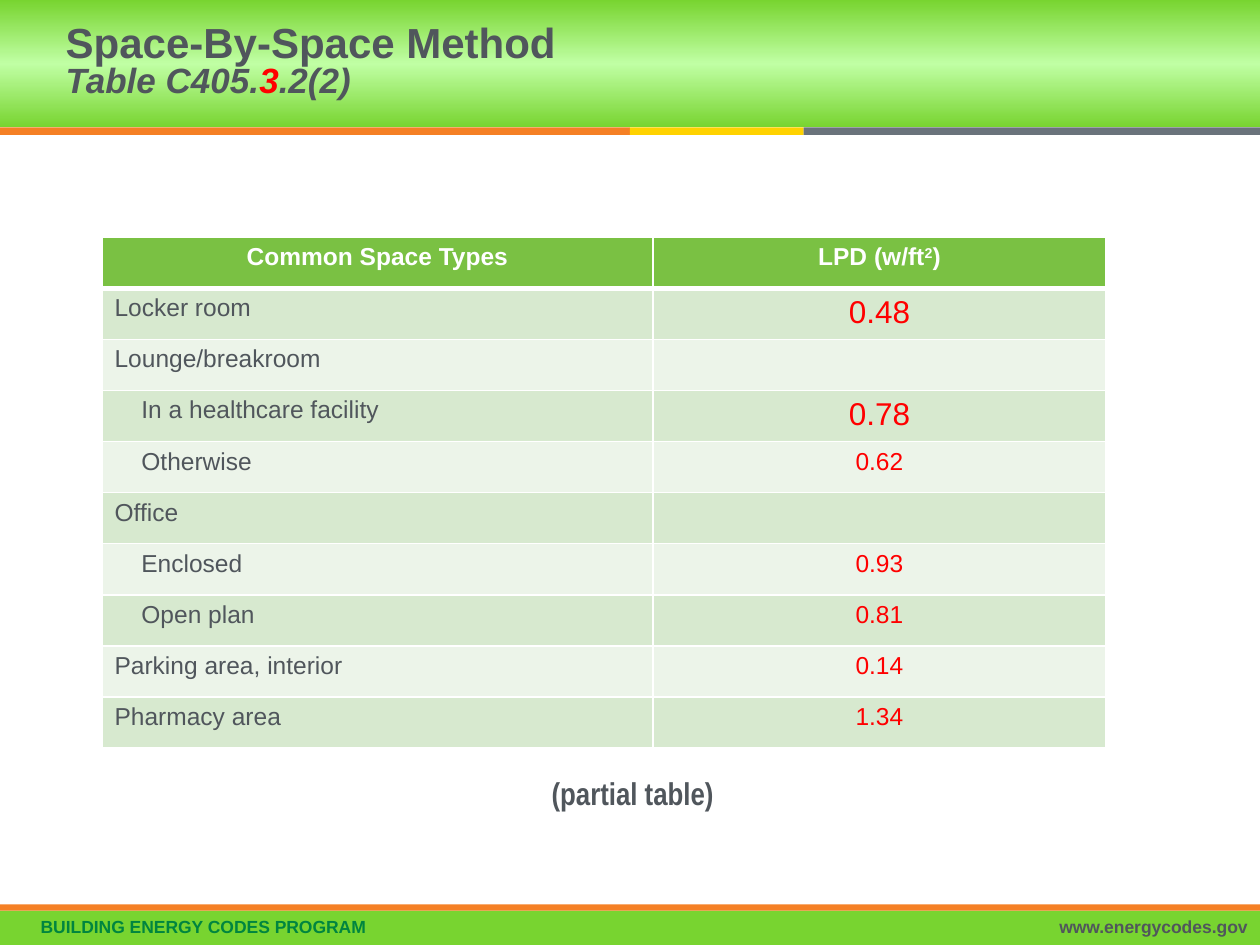
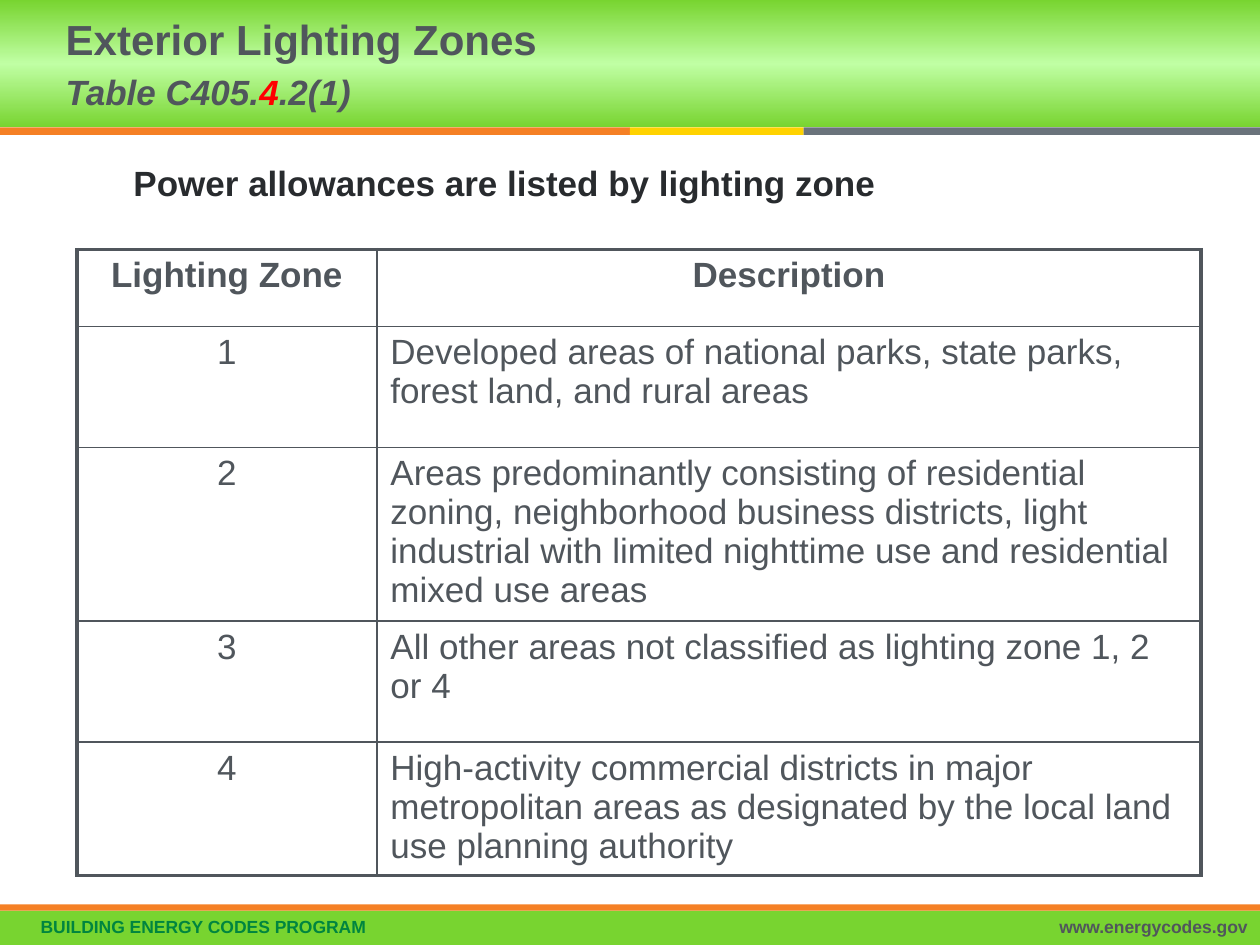
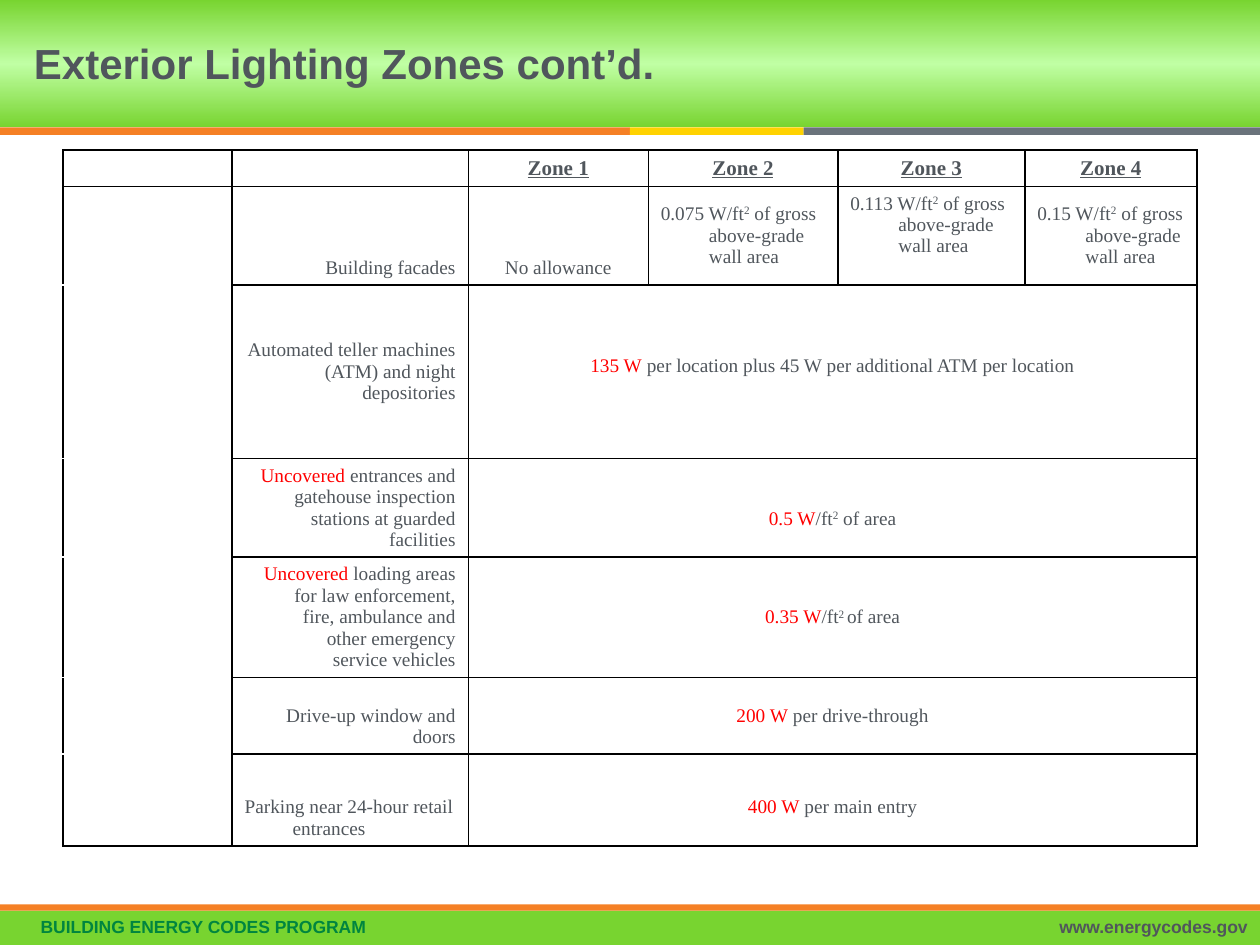
from collections import namedtuple
from copy import deepcopy

from lxml import etree
from pptx import Presentation
from pptx.dml.color import RGBColor
from pptx.enum import shapes, text
from pptx.oxml.ns import qn
from pptx.util import Cm, Pt

GREEN = RGBColor(0x78, 0xD4, 0x30)
PALE_GREEN = RGBColor(0xC0, 0xFF, 0xA4)
PROGRAM_GREEN = RGBColor(0x00, 0x85, 0x3F)
HEADER_GREEN = RGBColor(0x7A, 0xC1, 0x43)
ROW_TINTS = (RGBColor(0xEC, 0xF4, 0xE9), RGBColor(0xD7, 0xE9, 0xCF))
ORANGE = RGBColor(0xF5, 0x80, 0x25)
YELLOW = RGBColor(0xFF, 0xD2, 0x00)
SLATE = RGBColor(0x6A, 0x73, 0x7B)
GREY = RGBColor(0x50, 0x56, 0x5C)
CHARCOAL = RGBColor(0x28, 0x2B, 0x2E)
RED = RGBColor(0xFF, 0x00, 0x00)
WHITE = RGBColor(0xFF, 0xFF, 0xFF)
BLACK = RGBColor(0x00, 0x00, 0x00)

BODY = dict(name="Arial", size=Pt(14), color=GREY)
TITLE = dict(BODY, size=Pt(24), bold=True)
FOOTER = dict(BODY, size=Pt(10), bold=True)
ZONE_BODY = dict(BODY, size=Pt(20))
SERIF = dict(BODY, name="Times New Roman", size=Pt(11))
ZONE_HEAD = dict(SERIF, size=Pt(12), bold=True, underline=True)
SUBTITLE = dict(size=Pt(20), italic=True)
CHANGED = dict(color=RED)
RAISED = dict(baseline="30000")

LEFT, CENTER, RIGHT = text.PP_ALIGN.LEFT, text.PP_ALIGN.CENTER, text.PP_ALIGN.RIGHT
TOP, MIDDLE, BOTTOM = (text.MSO_ANCHOR.TOP, text.MSO_ANCHOR.MIDDLE,
                       text.MSO_ANCHOR.BOTTOM)

Box = namedtuple("Box", "left top width height")
SLIDE = Box(0, 0, 25.4, 19.05)
TITLE_BOX = Box(1.07, 0, 15.16, 2.57)
LINE = 0.43  # height of one line of the serif table text, in cm


def in_cm(box):
    return [Cm(length) for length in box]


def add_runs(paragraph, runs, base):
    """Write runs, each a string or a (string, changes to base) pair; "\\n" breaks."""
    for part in runs:
        words, changes = (part, {}) if isinstance(part, str) else part
        if words == "\n":
            paragraph.add_line_break()
            paragraph._p[-1].append(deepcopy(run._r.rPr))
            continue
        style = {**base, **changes}
        run = paragraph.add_run()
        run.text = words
        run.font.color.rgb = style.pop("color")
        if "baseline" in style:
            run._r.get_or_add_rPr().set("baseline", style.pop("baseline"))
        for attribute, value in style.items():
            setattr(run.font, attribute, value)


def add_text(slide, box, words, style, align=LEFT, spacing=1.0):
    textbox = slide.shapes.add_textbox(*in_cm(box))
    textbox.text_frame.word_wrap = True
    paragraph = textbox.text_frame.paragraphs[0]
    paragraph.alignment = align
    paragraph.line_spacing = spacing
    add_runs(paragraph, [words], style)
    return textbox


def add_band(slide, box, color):
    band = slide.shapes.add_shape(shapes.MSO_SHAPE.RECTANGLE, *in_cm(box))
    band.shadow.inherit = False
    band.line.fill.background()
    band.fill.solid()
    band.fill.fore_color.rgb = color
    return band


def add_header(slide, box):
    """Glowing band with a three-coloured rule along its foot."""
    glow = add_band(slide, box, GREEN)
    glow.fill.gradient()
    glow.fill.gradient_angle = 270
    stops = glow.element.find(".//" + qn("a:gsLst"))
    stops.append(deepcopy(stops[0]))
    for stop, position, color in zip(glow.fill.gradient_stops, (0, 0.5, 1),
                                     (GREEN, PALE_GREEN, GREEN)):
        stop.position = position
        stop.color.rgb = color
    parts = [glow]
    left = box.left
    for width, color in ((12.7, ORANGE), (3.5, YELLOW), (9.2, SLATE)):
        rule = Box(left, box.top + box.height, width, 0.15)
        parts.append(add_band(slide, rule, color))
        left += width
    return parts


def add_footer(slide, box):
    rule_height = 0.13
    half = box.width / 2
    words_top = box.top + 0.02
    return [
        add_band(slide, box, GREEN),
        add_band(slide, Box(box.left, box.top - rule_height, box.width, rule_height),
                 ORANGE),
        add_text(slide, Box(box.left + 0.57, words_top, half, 0.66),
                 "BUILDING ENERGY CODES PROGRAM",
                 dict(FOOTER, color=PROGRAM_GREEN), spacing=0.9),
        add_text(slide, Box(box.left + half, words_top, half, 0.66),
                 "www.energycodes.gov", FOOTER, RIGHT, 0.9),
    ]


def dress_layout(layout, slide):
    """Put header and footer on the layout, drawing them by way of a slide."""
    for placeholder in list(layout.placeholders):
        if placeholder.placeholder_format.idx:
            layout.shapes.element.remove(placeholder.element)
    header = add_header(slide, Box(0, 0, SLIDE.width, 2.57))
    footer = add_footer(slide, Box(0, 18.36, SLIDE.width, 0.69))
    for part in header + footer:
        layout.shapes.element.append(part.element)


def set_title(slide, box, runs, spacing):
    title = slide.shapes.title
    title.left, title.top, title.width, title.height = in_cm(box)
    frame = title.text_frame
    for attribute, value in dict(word_wrap=True, vertical_anchor=MIDDLE,
                                 auto_size=text.MSO_AUTO_SIZE.NONE).items():
        setattr(frame, attribute, value)
    paragraph = frame.paragraphs[0]
    paragraph.alignment = LEFT
    paragraph.line_spacing = spacing
    add_runs(paragraph, runs, TITLE)


def add_grid(slide, left, top, widths, heights):
    box = Box(left, top, sum(widths), sum(heights))
    table = slide.shapes.add_table(len(heights), len(widths), *in_cm(box)).table
    table.first_row = table.horz_banding = False
    for column, width in zip(table.columns, widths):
        column.width = Cm(width)
    for row, height in zip(table.rows, heights):
        row.height = Cm(height)
    return table


def set_borders(cell, color, **widths):
    """Draw the given sides (L, R, T, B), with widths in points."""
    properties = cell._tc.get_or_add_tcPr()
    sides = [side for side in "LRTB" if side in widths]
    for place, side in enumerate(sides):
        line = etree.Element(qn("a:ln" + side), w=str(Pt(widths[side])))
        fill = etree.SubElement(line, qn("a:solidFill"))
        etree.SubElement(fill, qn("a:srgbClr"), val=str(color))
        properties.insert(place, line)


def fill_cell(cell, runs, style, align=LEFT, anchor=TOP, fill=None, hanging=0,
              indent=0, lift=0):
    """Write a cell; indent and lift widen its left and bottom margins, in cm."""
    if fill is None:
        cell.fill.background()
    else:
        cell.fill.solid()
        cell.fill.fore_color.rgb = fill
    cell.vertical_anchor = anchor
    cell.margin_left = Cm(0.25 + indent)
    cell.margin_bottom = Cm(0.13 + lift)
    paragraph = cell.text_frame.paragraphs[0]
    paragraph.alignment = align
    if hanging:
        properties = paragraph._p.get_or_add_pPr()
        properties.set("marL", str(Cm(hanging)))
        properties.set("indent", str(-Cm(hanging)))
    add_runs(paragraph, runs, style)
    if not runs:
        etree.SubElement(paragraph._p, qn("a:endParaRPr"),
                         sz=str(int(style["size"].pt * 100)))


SPACE_TYPES = [  # space type, indent level, LPD, LPD size
    ("Locker room", 0, "0.48", 18),
    ("Lounge/breakroom", 0, "", 14),
    ("In a healthcare facility", 1, "0.78", 18),
    ("Otherwise", 1, "0.62", 14),
    ("Office", 0, "", 14),
    ("Enclosed", 1, "0.93", 14),
    ("Open plan", 1, "0.81", 14),
    ("Parking area, interior", 0, "0.14", 14),
    ("Pharmacy area", 0, "1.34", 14),
]


def add_space_types(slide, left, top):
    table = add_grid(slide, left, top, (11.1, 9.14), [1.03] * (len(SPACE_TYPES) + 1))
    head = dict(BODY, color=WHITE, bold=True)
    headings = (["Common Space Types"], ["LPD (w/ft", ("2", RAISED), ")"])
    for cell, heading in zip(table.rows[0].cells, headings):
        fill_cell(cell, heading, head, CENTER, fill=HEADER_GREEN)
        set_borders(cell, WHITE, L=1, R=1, T=1, B=3)
    for row, (space, level, lpd, size) in enumerate(SPACE_TYPES, 1):
        tint = ROW_TINTS[row % 2]
        fill_cell(table.cell(row, 0), [space], BODY, fill=tint, indent=0.54 * level)
        fill_cell(table.cell(row, 1), [lpd] if lpd else [],
                  dict(BODY, color=RED, size=Pt(size)), CENTER, fill=tint)
        for cell in table.rows[row].cells:
            set_borders(cell, WHITE, L=1, R=1, T=3 if row == 1 else 1, B=1)


ZONES = [
    ("Lighting Zone", "Description"),
    ("1", "Developed areas of national parks, state parks, forest land, "
          "and rural areas"),
    ("2", "Areas predominantly consisting of residential zoning, neighborhood "
          "business districts, light industrial with limited nighttime use and "
          "residential mixed use areas"),
    ("3", "All other areas not classified as lighting zone 1, 2 or 4"),
    ("4", "High-activity commercial districts in major metropolitan areas as "
          "designated by the local land use planning authority"),
]


def add_zones(slide, left, top):
    table = add_grid(slide, left, top, (6.05, 16.61), (1.55, 2.44, 3.5, 2.44, 2.69))
    thin, thick = 1, 2.25
    last = len(ZONES) - 1
    for row, zone in enumerate(ZONES):
        for column, words in enumerate(zone):
            cell = table.cell(row, column)
            centred = row == 0 or column == 0
            fill_cell(cell, [words], dict(ZONE_BODY, bold=row == 0),
                      CENTER if centred else LEFT)
            cell.margin_left = cell.margin_right = Cm(0.27)
            set_borders(cell, GREY,
                        L=thin if column else thick, R=thick if column else thin,
                        T=thin if row else thick, B=thick if row == last else thin)


UNCOVERED = ("Uncovered", CHANGED)
FACADE_LIMITS = [("0.075", 0), ("0.113", LINE), ("0.15", 0)]  # W/ft2, lift
ALLOWANCES = [  # use, alignment, anchor, allowance, lift
    (["Automated teller machines (ATM) and night depositories"], RIGHT, MIDDLE,
     [("135 W", CHANGED), " per location plus 45 W per additional ATM per location"],
     1.53),
    ([UNCOVERED, " entrances and gatehouse inspection stations at guarded facilities"],
     RIGHT, BOTTOM,
     [("0.5 W", CHANGED), "/ft", ("2", RAISED), " of area"], LINE),
    ([UNCOVERED, " loading areas for law enforcement, fire, ambulance and other "
      "emergency service vehicles"], RIGHT, TOP,
     [("0.35 W", CHANGED), "/ft", ("2 ", RAISED), "of area"], 2 * LINE),
    (["Drive-up window and doors"], RIGHT, BOTTOM,
     [("200 W", CHANGED), " per drive-through"], LINE),
    (["Parking near 24-hour retail entrances"], LEFT, BOTTOM,
     [("400 W", CHANGED), " per main entry"], LINE),
]


def add_allowances(slide, left, top):
    table = add_grid(slide, left, top, (3.41, 4.76, 3.63, 3.82, 3.77, 3.47),
                     (0.73, 1.99, 3.5, 1.98, 2.42, 1.55, 1.85))
    last = len(table.rows) - 1

    def write(row, column, runs, align=CENTER, anchor=BOTTOM, style=SERIF, lift=0):
        fill_cell(table.cell(row, column), runs, style, align, anchor,
                  hanging=0.97, lift=lift)

    for row in range(last + 1):
        write(row, 0, [])
    write(0, 1, [])
    for zone in range(1, 5):
        write(0, zone + 1, [f"Zone {zone}"], style=ZONE_HEAD)
    write(1, 1, ["Building facades"], RIGHT)
    write(1, 2, ["No allowance"])
    for column, (limit, lift) in enumerate(FACADE_LIMITS, 3):
        write(1, column, [f"{limit} W/ft", ("2", RAISED),
                          " of gross above-grade wall area"],
              LEFT, MIDDLE, lift=lift)
    for row, (use, align, anchor, allowance, lift) in enumerate(ALLOWANCES, 2):
        table.cell(row, 2).merge(table.cell(row, 5))
        write(row, 1, use, align, anchor)
        write(row, 2, allowance, lift=lift)

    for row in range(last + 1):
        for column in range(len(table.columns)):
            sides = dict(L=1, R=1, T=1, B=1)
            if column == 0 and row > 1:
                del sides["T"]
            if column == 0 and 0 < row < last:
                del sides["B"]
            set_borders(table.cell(row, column), BLACK, **sides)


def table_reference(before, changed, after):
    return ["\n", (before, SUBTITLE), (changed, {**SUBTITLE, **CHANGED}),
            (after, SUBTITLE)]


def build_space_by_space(slide):
    set_title(slide, TITLE_BOX, ["Space-By-Space Method"]
              + table_reference("Table C405.", "3", ".2(2)"), 0.8)
    add_space_types(slide, 2.06, 4.78)
    add_text(slide, Box(10.87, 15.62, 8.13, 0.89), "(partial table)",
             dict(TITLE, name="Arial Narrow", size=Pt(18)), spacing=0.8)


def build_lighting_zones(slide):
    set_title(slide, TITLE_BOX, ["Exterior Lighting Zones"]
              + table_reference("Table C405.", "4", ".2(1)"), Pt(28))
    add_zones(slide, 1.55, 5.03)
    add_text(slide, Box(2.44, 3.14, 21.54, 1.3),
             "Power allowances are listed by lighting zone",
             dict(ZONE_BODY, color=CHARCOAL, bold=True))


def build_zone_allowances(slide):
    set_title(slide, TITLE_BOX._replace(left=0.43, width=15.8),
              ["Exterior Lighting Zones cont’d."], Pt(28))
    add_allowances(slide, 1.27, 3.02)


def main():
    deck = Presentation()
    deck.slide_width, deck.slide_height = Cm(SLIDE.width), Cm(SLIDE.height)
    layout = deck.slide_layouts.get_by_name("Title Only")
    builders = (build_space_by_space, build_lighting_zones, build_zone_allowances)
    slides = [deck.slides.add_slide(layout) for _ in builders]
    dress_layout(layout, slides[0])
    for build, slide in zip(builders, slides):
        build(slide)
    deck.save("out.pptx")


if __name__ == "__main__":
    main()
